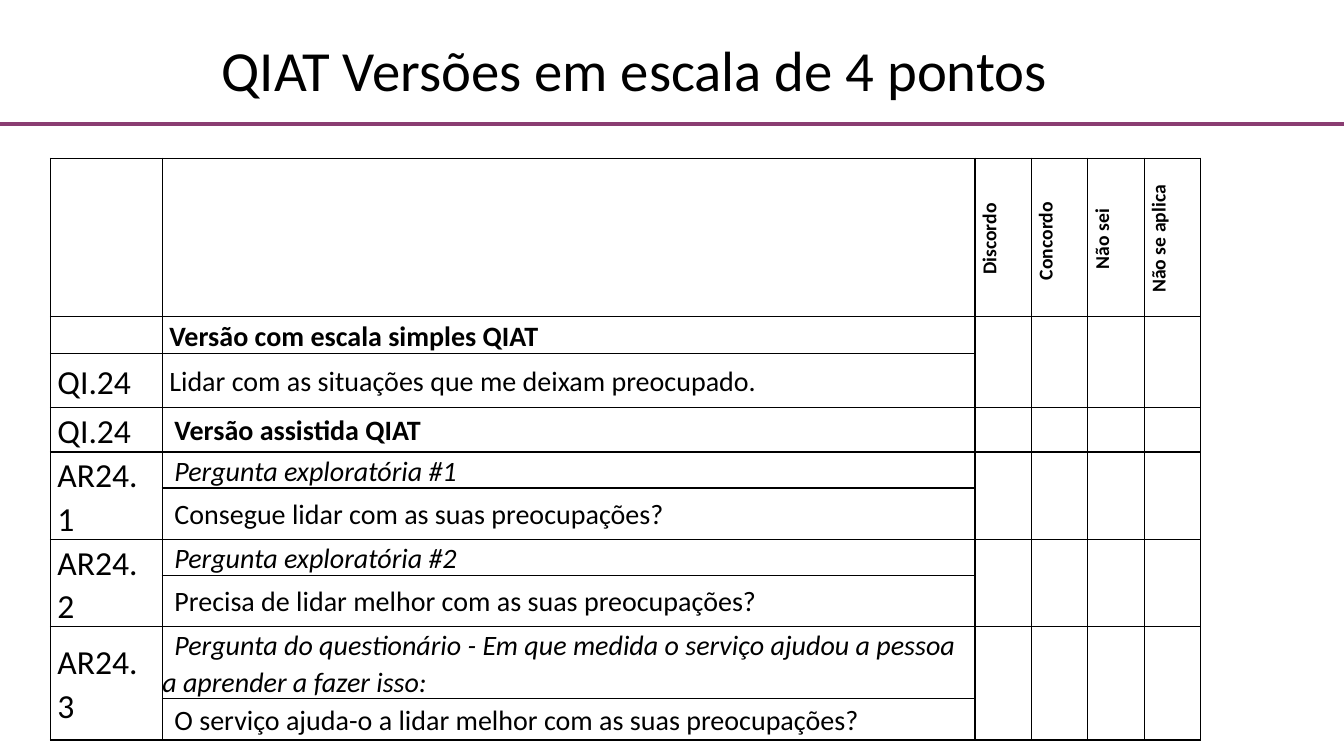
import lxml.etree
import pptx
import pptx.dml.color
import pptx.enum.shapes
import pptx.enum.text
import pptx.oxml.ns
import pptx.util

PX = 9144
FONT = "Calibri"
BLACK = "000000"
PLUM = "8A3D72"

COLUMN_WIDTHS = [111, 806] + [56] * 4
ROW_HEIGHTS = [157, 36, 54, 43, 35, 35, 35, 39, 39, 41]
SCALE_LABELS = ["Discordo", "Concordo ", "Não sei", "Não se aplica"]
CODES = {2: "QI.24", 3: "QI.24", 4: "AR24.1", 6: "AR24.2", 8: "AR24.3"}
QUESTIONS = [
    ("Versão com escala simples QIAT", "bold"),
    ("Lidar com as situações que me deixam preocupado.", ""),
    ("Versão assistida QIAT", "bold"),
    ("Pergunta exploratória #1", "italic"),
    ("Consegue lidar com as suas preocupações?", ""),
    ("Pergunta exploratória #2", "italic"),
    ("Precisa de lidar melhor com as suas preocupações?", ""),
    ("Pergunta do questionário - Em que medida o serviço ajudou a pessoa "
     "a aprender a fazer isso:", "italic"),
    ("O serviço ajuda-o a lidar melhor com as suas preocupações?", ""),
]


def px(length):
    """Turn whole pixels into EMU."""
    return pptx.util.Emu(length * PX)


def color(value):
    """Turn a hex string into a colour."""
    return pptx.dml.color.RGBColor.from_string(value)


def format_runs(paragraph, size, style=""):
    """Give every run of a paragraph its font, size, colour and style."""
    for run in paragraph.runs:
        run.font.name = FONT
        run.font.size = pptx.util.Pt(size)
        run.font.color.rgb = color(BLACK)
        run.font.bold = style == "bold"
        run.font.italic = style == "italic"


def add_title(slide, text):
    """Add the slide heading."""
    heading = slide.shapes.add_textbox(px(210), px(45), px(1016), px(64))
    frame = heading.text_frame
    frame.word_wrap = True
    frame.vertical_anchor = pptx.enum.text.MSO_ANCHOR.MIDDLE
    frame.text = text
    frame.paragraphs[0].line_spacing = 0.7
    format_runs(frame.paragraphs[0], 40.5)


def add_rule(slide):
    """Draw the full-width line under the heading."""
    rule = slide.shapes.add_connector(
        pptx.enum.shapes.MSO_CONNECTOR.STRAIGHT, px(0), px(123), px(1333), px(123))
    rule.line.color.rgb = color(PLUM)
    rule.line.width = pptx.util.Pt(2.25)
    lxml.etree.SubElement(rule._element.spPr, pptx.oxml.ns.qn("a:effectLst"))


def style_cell(cell):
    """Clear the fill and margins of a cell and border it on all sides."""
    cell.margin_left = cell.margin_right = cell.margin_top = cell.margin_bottom = 0
    properties = cell._tc.get_or_add_tcPr()
    for side in ("a:lnL", "a:lnR", "a:lnT", "a:lnB"):
        border = lxml.etree.SubElement(
            properties, pptx.oxml.ns.qn(side), w=str(pptx.util.Pt(1)))
        fill = lxml.etree.SubElement(border, pptx.oxml.ns.qn("a:solidFill"))
        lxml.etree.SubElement(fill, pptx.oxml.ns.qn("a:srgbClr"), val=BLACK)
    cell.fill.background()


def write_cell(cell, text, size, style="", inset=True):
    """Write one paragraph into a cell, inset or with an indented first line."""
    cell.vertical_anchor = pptx.enum.text.MSO_ANCHOR.MIDDLE
    cell.text_frame.text = text
    paragraph = cell.text_frame.paragraphs[0]
    paragraph.line_spacing = 1.07
    paragraph.space_after = pptx.util.Pt(8)
    format_runs(paragraph, size, style)
    if inset:
        cell.margin_left = px(7)
        cell.margin_right = px(10)
        cell.margin_top = px(1)
    else:
        paragraph._p.get_or_add_pPr().set("indent", str(px(12)))
    return paragraph


def write_scale_label(cell, label):
    """Write an answer heading that reads upwards."""
    paragraph = write_cell(cell, label, 14, "bold")
    paragraph.alignment = pptx.enum.text.PP_ALIGN.CENTER
    cell._tc.get_or_add_tcPr().set("vert", "vert270")


def add_questionnaire(slide):
    """Add the table of questions and answer columns."""
    table = slide.shapes.add_table(
        len(ROW_HEIGHTS), len(COLUMN_WIDTHS), px(50), px(157),
        px(sum(COLUMN_WIDTHS)), px(sum(ROW_HEIGHTS))).table
    table.first_row = table.horz_banding = False
    for column, width in zip(table.columns, COLUMN_WIDTHS):
        column.width = px(width)
    for row, height in zip(table.rows, ROW_HEIGHTS):
        row.height = px(height)
    for cell in table.iter_cells():
        style_cell(cell)
    for top in (1, 4, 6, 8):
        for column in range(len(COLUMN_WIDTHS)):
            if column > 1 or (column == 0 and top > 1):
                table.cell(top, column).merge(table.cell(top + 1, column))
    for column, label in enumerate(SCALE_LABELS, start=2):
        write_scale_label(table.cell(0, column), label)
    for row, code in CODES.items():
        write_cell(table.cell(row, 0), code, 24)
    for row, (question, style) in enumerate(QUESTIONS, start=1):
        write_cell(table.cell(row, 1), question, 20, style, inset=row < 3)


def main():
    """Build and save the slide."""
    deck = pptx.Presentation()
    deck.slide_width, deck.slide_height = px(1333), px(750)
    slide = deck.slides.add_slide(deck.slide_layouts[6])
    add_rule(slide)
    add_title(slide, "QIAT Versões em escala de 4 pontos")
    add_questionnaire(slide)
    deck.save("out.pptx")


if __name__ == "__main__":
    main()
